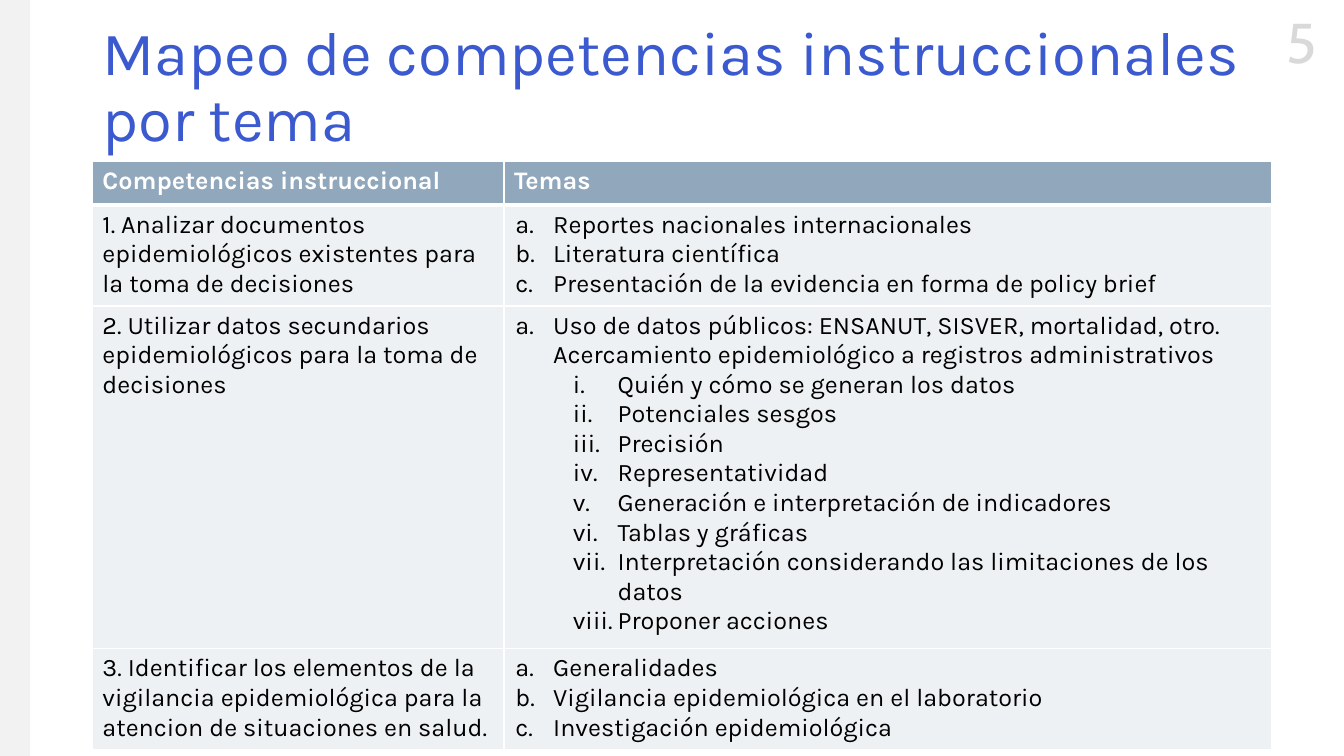
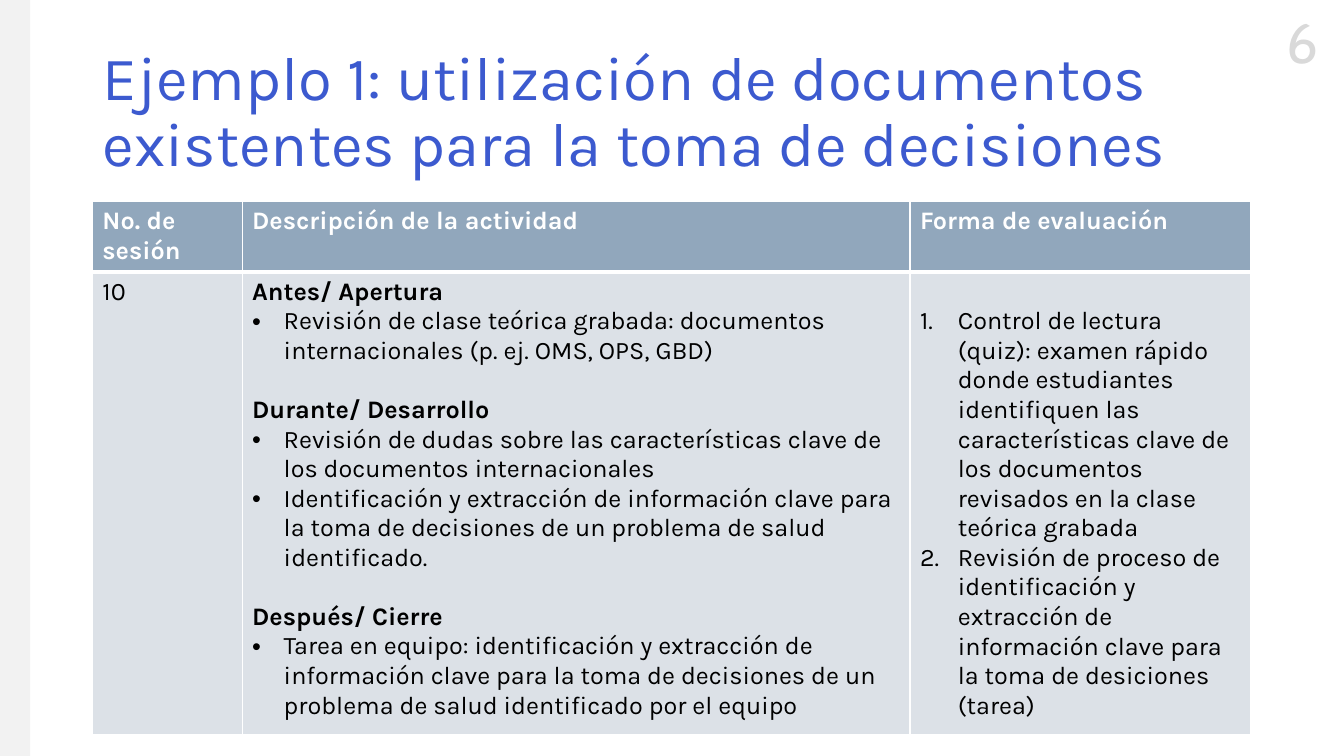
from lxml import etree
from pptx import Presentation
from pptx.dml.color import RGBColor
from pptx.enum import shapes, text
from pptx.oxml import ns
from pptx.util import Pt

HUES = {"title": "3C5ACF", "head": "91A7BC", "pale": "EEF1F3", "mist": "DCE1E7",
        "band": "F2F2F2", "page": "D9D9D9", "white": "FFFFFF", "black": "000000"}
LINE = 21
MARKS = {
    "alpha": (0, 28, -27, "buAutoNum", {"type": "alphaLcPeriod"}),
    "roman": (1, 74, -32, "buAutoNum", {"type": "romanLcPeriod"}),
    "digit": (0, 27, -27, "buAutoNum", {"type": "arabicPeriod"}),
    "dot": (0, 22.5, -22.5, "buChar", {"char": "•"}),
}


def items(kind, *lines):
    return [(kind, line) for line in lines]


class Deck:
    def __init__(self):
        self.prs = Presentation()
        self.prs.slide_width, self.prs.slide_height = Pt(960), Pt(540)
        self.slide = None

    def hue(self, name):
        return RGBColor.from_string(HUES[name])

    def font(self, para, size, color, face="Karla", bold=False):
        font = para.font
        font.name, font.size, font.bold = face, Pt(size), bold
        font.color.rgb = self.hue(color)

    def page(self, number, title, top):
        self.slide = self.prs.slides.add_slide(self.prs.slide_layouts[5])
        self.band()
        self.number(number)
        self.title(title, top)

    def band(self):
        band = self.slide.shapes.add_shape(
            shapes.MSO_SHAPE.RECTANGLE, 0, 0, Pt(21.5), self.prs.slide_height)
        band.shadow.inherit = False
        band.fill.solid()
        band.fill.fore_color.rgb = self.hue("band")
        band.line.fill.background()

    def number(self, number):
        box = self.slide.shapes.add_textbox(Pt(903), Pt(1.5), Pt(54), Pt(55.5))
        box.text_frame.word_wrap = False
        para = box.text_frame.paragraphs[0]
        para.text = str(number)
        para.alignment = text.PP_ALIGN.CENTER
        self.font(para, 40, "page", "Cabin")

    def title(self, words, top):
        box = self.slide.shapes.title
        box.left, box.top, box.width, box.height = Pt(66), Pt(top), Pt(828), Pt(104.4)
        frame = box.text_frame
        frame.auto_size = text.MSO_AUTO_SIZE.NONE
        frame.vertical_anchor = text.MSO_ANCHOR.MIDDLE
        para = frame.paragraphs[0]
        para.text = words
        para.alignment = text.PP_ALIGN.LEFT
        para.line_spacing = 0.9
        self.font(para, 44, "title")

    def mark(self, para, kind):
        level, left, hang, tag, attrs = MARKS[kind]
        para.level = level
        props = para._p.get_or_add_pPr()
        props.set("marL", str(Pt(left)))
        props.set("indent", str(Pt(hang)))
        if kind == "dot":
            etree.SubElement(props, ns.qn("a:buFont"), typeface="Arial")
        etree.SubElement(props, ns.qn("a:" + tag), attrs)

    def edges(self, cell, row):
        props = cell._tc.get_or_add_tcPr()
        thick = {0: "B", 1: "T"}.get(row)
        for side in "LRTB":
            width = 3 if side == thick else 1
            line = etree.SubElement(props, ns.qn("a:ln" + side), w=str(Pt(width)))
            fill = etree.SubElement(line, ns.qn("a:solidFill"))
            etree.SubElement(fill, ns.qn("a:srgbClr"), val=HUES["white"])

    def cell(self, cell, row, lines, fill):
        self.edges(cell, row)
        cell.fill.solid()
        cell.fill.fore_color.rgb = self.hue("head" if row == 0 else fill)
        frame = cell.text_frame
        for i, (kind, words) in enumerate(lines):
            para = frame.add_paragraph() if i else frame.paragraphs[0]
            para.text = words
            if kind in MARKS:
                self.mark(para, kind)
            if kind == "bold" and i:
                para.space_before = Pt(LINE)
            self.font(para, 18, "white" if row == 0 else "black",
                      bold=row == 0 or kind == "bold")

    def table(self, top, cols, rows, heads, body, fill):
        data = [[items("plain", head) for head in heads]] + body
        table = self.slide.shapes.add_table(
            len(rows), len(cols), Pt(66), Pt(top), Pt(sum(cols)), Pt(sum(rows))).table
        table.horz_banding = False
        for col, width in zip(table.columns, cols):
            col.width = Pt(width)
        for r, (row, height) in enumerate(zip(table.rows, rows)):
            row.height = Pt(height)
            for c, lines in enumerate(data[r]):
                self.cell(table.cell(r, c), r, lines, fill)
        return table


def main():
    deck = Deck()
    deck.page(5, "Mapeo de competencias instruccionales por tema", 11)
    deck.table(115.5, (294, 548.5), (31, 70, 239, 70),
               ("Competencias instruccional", "Temas"), [
        [items("plain", "1. Analizar documentos epidemiológicos existentes para la toma de decisiones"),
         items("alpha", "Reportes nacionales internacionales",
               "Literatura científica",
               "Presentación de la evidencia en forma de policy brief")],
        [items("plain", "2. Utilizar datos secundarios epidemiológicos para la toma de decisiones"),
         items("alpha", "Uso de datos públicos: ENSANUT, SISVER, mortalidad, otro. "
               "Acercamiento epidemiológico a registros administrativos")
         + items("roman", "Quién y cómo se generan los datos",
                 "Potenciales sesgos",
                 "Precisión",
                 "Representatividad",
                 "Generación e interpretación de indicadores",
                 "Tablas y gráficas",
                 "Interpretación considerando las limitaciones de los datos",
                 "Proponer acciones")],
        [items("plain", "3. Identificar los elementos de la vigilancia epidemiológica "
               "para la atencion de situaciones en salud."),
         items("alpha", "Generalidades",
               "Vigilancia epidemiológica en el laboratorio",
               "Investigación epidemiológica")],
    ], "pale")

    deck.page(6, "Ejemplo 1: utilización de documentos existentes para la toma de decisiones", 29)
    table = deck.table(144, (107, 477, 243.5), (49, 323),
                       ("No. de sesión", "Descripción de la actividad", "Forma de evaluación"), [
        [items("plain", "10"),
         items("bold", "Antes/ Apertura")
         + items("dot", "Revisión de clase teórica grabada: documentos internacionales "
                 "(p. ej. OMS, OPS, GBD)")
         + items("bold", "Durante/ Desarrollo")
         + items("dot", "Revisión de dudas sobre las características clave de los "
                 "documentos internacionales",
                 "Identificación y extracción de información clave para la toma de "
                 "decisiones de un problema de salud identificado.")
         + items("bold", "Después/ Cierre")
         + items("dot", "Tarea en equipo: identificación y extracción de información clave "
                 "para la toma de decisiones de un problema de salud identificado por el equipo"),
         items("digit", "Control de lectura (quiz): examen rápido donde estudiantes "
               "identifiquen las características clave de los documentos revisados "
               "en la clase teórica grabada",
               "Revisión de proceso de identificación y extracción de información "
               "clave para la toma de desiciones (tarea)")],
    ], "mist")
    table.cell(1, 2).margin_top = Pt(3.6 + LINE)
    deck.prs.save("out.pptx")


if __name__ == "__main__":
    main()
